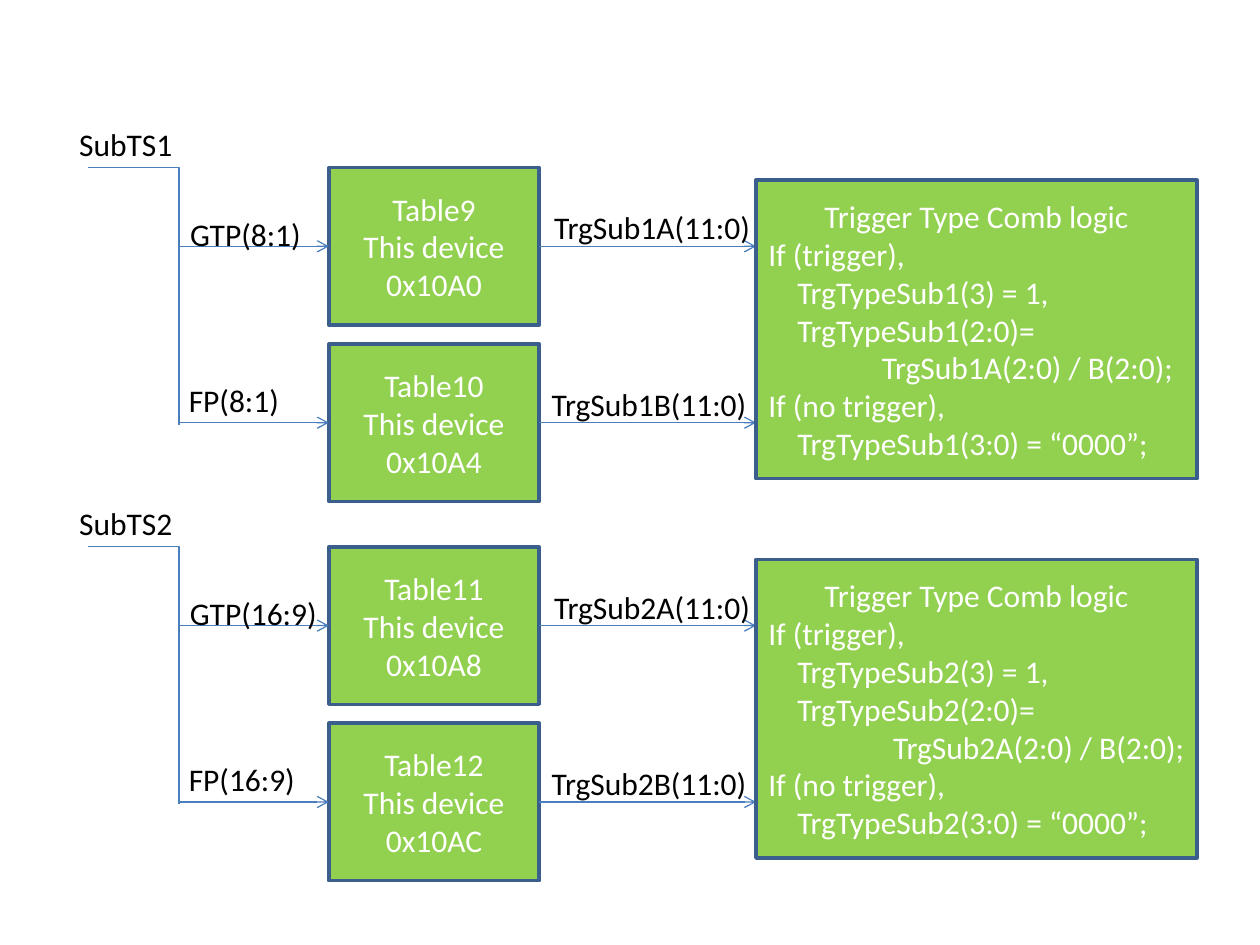
from pptx import Presentation, util as u
from pptx.dml.color import RGBColor
from pptx.enum import shapes, text
from pptx.oxml import xmlchemy as x

GREEN = RGBColor(0x92, 0xD0, 0x50)
BORDER = RGBColor(0x3A, 0x5F, 0x8C)
WIRE = RGBColor(0x4B, 0x7E, 0xBC)
WHITE = RGBColor(255, 255, 255)
BLACK = RGBColor(0, 0, 0)

# Columns, in inches from the left edge of a band
INPUT, SPINE, TABLE, LOGIC = 0.17, 0.89, 2.08, 5.47
TABLE_W, TABLE_H, LOGIC_W, LOGIC_H = 1.67, 1.25, 3.5, 2.37
ROW_PITCH, BAND_PITCH = 1.4, 3.01
LEFT, CENTER, RIGHT = (text.PP_ALIGN.LEFT, text.PP_ALIGN.CENTER,
                       text.PP_ALIGN.RIGHT)


def write(tf, lines, color):
    """Fill a text frame with (text, alignment, left indent) lines."""
    for i, (line, align, indent) in enumerate(lines):
        p = tf.paragraphs[0] if i == 0 else tf.add_paragraph()
        p.text, p.alignment = line, align
        p.font.size, p.font.name = u.Pt(18), "Calibri"
        p.font.color.rgb = color
        if indent:
            p._p.get_or_add_pPr().set("marL", str(u.Inches(indent)))


def block(slide, left, top, width, height, lines):
    sp = slide.shapes.add_shape(
        shapes.MSO_SHAPE.RECTANGLE,
        *map(u.Inches, (left, top, width, height)))
    sp.shadow.inherit = False
    sp.fill.solid()
    sp.fill.fore_color.rgb = GREEN
    sp.line.color.rgb, sp.line.width = BORDER, u.Pt(2)
    sp.text_frame.word_wrap = True
    sp.text_frame.vertical_anchor = text.MSO_ANCHOR.MIDDLE
    write(sp.text_frame, lines, WHITE)


def label(slide, left, top, width, words):
    box = slide.shapes.add_textbox(
        *map(u.Inches, (left, top, width, 0.4)))
    tf = box.text_frame
    tf.word_wrap = False
    tf.auto_size = text.MSO_AUTO_SIZE.SHAPE_TO_FIT_TEXT
    write(tf, [(words, LEFT, 0)], BLACK)


def wire(slide, x1, y1, x2, y2, arrow=True, bend=None):
    """Draw a line; bend is the share of the width where it turns."""
    kind = shapes.MSO_CONNECTOR.ELBOW if bend else shapes.MSO_CONNECTOR.STRAIGHT
    cx = slide.shapes.add_connector(kind, *map(u.Inches, (x1, y1, x2, y2)))
    cx.line.color.rgb, cx.line.width = WIRE, u.Pt(0.75)
    pr = cx._element.spPr
    if arrow:
        tail = x.OxmlElement("a:tailEnd")
        tail.set("type", "arrow")
        cx.line._get_or_add_ln().append(tail)
    if bend:
        guide = x.OxmlElement("a:gd")
        guide.set("name", "adj1")
        guide.set("fmla", f"val {round(bend * 100000)}")
        pr.prstGeom.get_or_add_avLst().append(guide)
    pr.append(x.OxmlElement("a:effectLst"))


def trigger_band(slide, left, top, n, bits, tables, last_operand):
    """One subsystem: input wiring, two lookup tables and the logic block."""
    spine, table, logic = left + SPINE, left + TABLE, left + LOGIC
    table_end = table + TABLE_W
    rows = [top + i * ROW_PITCH + TABLE_H / 2 for i in range(2)]

    # Lookup tables and their outputs
    for i, (y, side, (name, address)) in enumerate(zip(rows, "AB", tables)):
        block(slide, table, top + i * ROW_PITCH, TABLE_W, TABLE_H,
              [(s, CENTER, 0) for s in (name, "This device", address)])
        wire(slide, table_end, y, logic, y)
        label(slide, table_end + 0.02 * (1 - i), y - 0.35, 1.77,
              f"TrgSub{n}{side}(11:0)")

    # Input and its two branches; labels widen with each extra digit
    extra = 0.13 * (len(bits) - len("8:1"))
    label(slide, left, top - 0.39, 0.95, f"SubTS{n}")
    wire(slide, left + INPUT, top, table, rows[0],
         bend=(SPINE - INPUT) / (TABLE - INPUT))
    wire(slide, spine, rows[0] - 0.1, spine, rows[1] + 0.02, arrow=False)
    wire(slide, spine, rows[1], table, rows[1])
    label(slide, spine - 0.01, rows[0] - 0.3, 1.11 + extra, f"GTP({bits})")
    label(slide, spine - 0.02, rows[1] - 0.38, 0.95 + extra, f"FP({bits})")

    # Combination logic
    block(slide, logic, top + 0.1, LOGIC_W, LOGIC_H, [
        ("Trigger Type Comb logic", CENTER, 0),
        ("If (trigger),", LEFT, 0),
        (f"TrgTypeSub{n}(3) = 1,", LEFT, 0.23),
        (f"TrgTypeSub{n}(2:0)=", LEFT, 0.23),
        (f"TrgSub{n}A(2:0) / B(2:0);", *last_operand),
        ("If (no trigger),", LEFT, 0),
        (f"TrgTypeSub{n}(3:0) = “0000”;", LEFT, 0.23),
    ])


def main():
    prs = Presentation()
    prs.slide_width, prs.slide_height = u.Inches(10), u.Inches(7.5)
    slide = prs.slides.add_slide(prs.slide_layouts[6])
    bands = [
        ("8:1", [("Table9", "0x10A0"), ("Table10", "0x10A4")], (LEFT, 0.9)),
        ("16:9", [("Table11", "0x10A8"), ("Table12", "0x10AC")], (RIGHT, 0)),
    ]
    for i, band in enumerate(bands):
        trigger_band(slide, 0.53, 1.33 + i * BAND_PITCH, i + 1, *band)
    prs.save("out.pptx")


if __name__ == "__main__":
    main()
